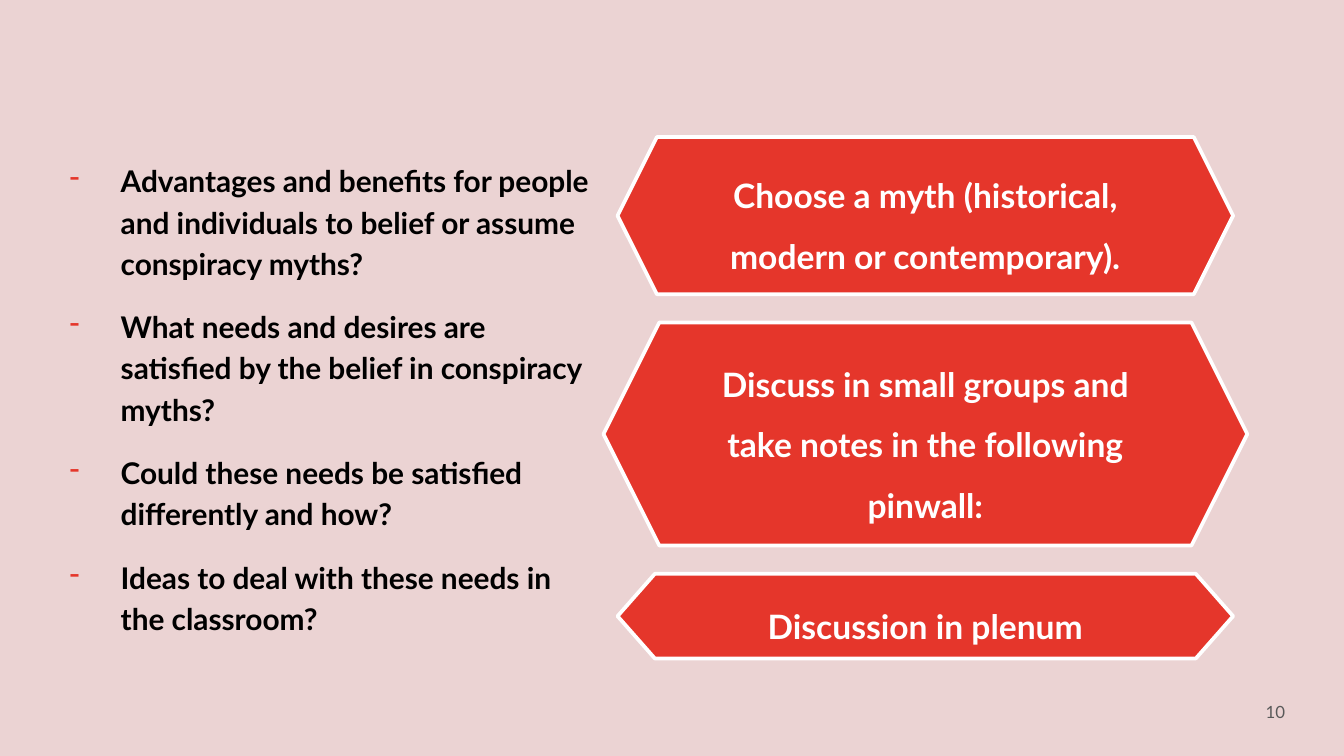
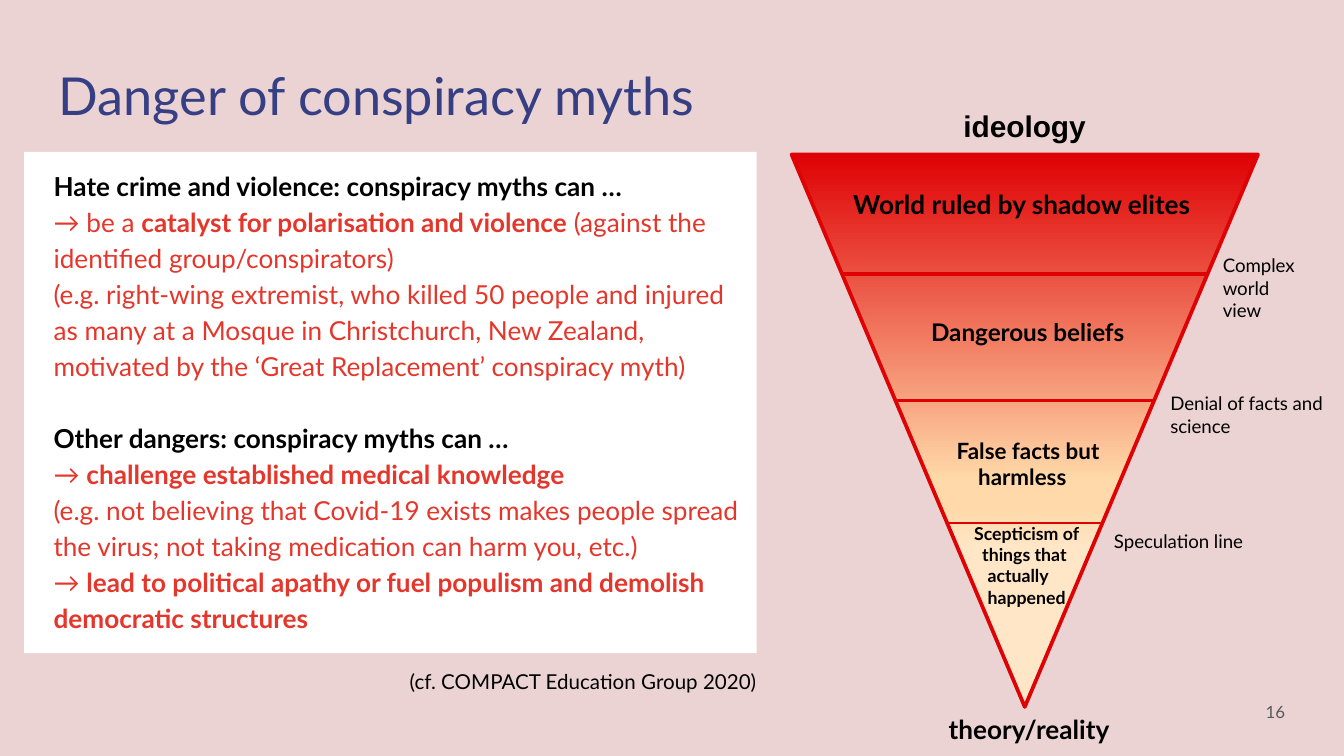
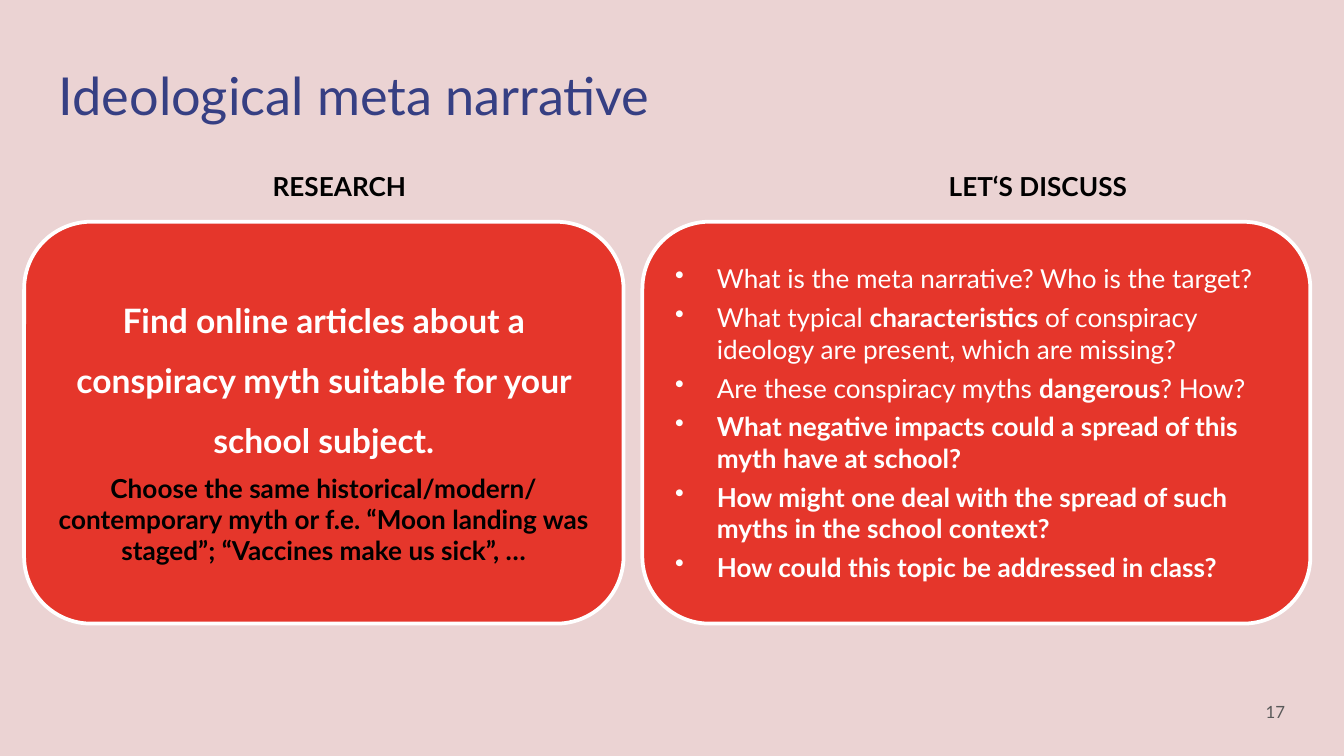
from dataclasses import dataclass

from lxml import etree
from pptx import Presentation
from pptx.dml.color import RGBColor
from pptx.enum.shapes import MSO_CONNECTOR, MSO_SHAPE
from pptx.enum.text import MSO_ANCHOR, PP_ALIGN
from pptx.oxml.ns import qn
from pptx.util import Inches, Pt

LEFT, CENTER, RIGHT = PP_ALIGN.LEFT, PP_ALIGN.CENTER, PP_ALIGN.RIGHT
TOP, MIDDLE = MSO_ANCHOR.TOP, MSO_ANCHOR.MIDDLE
RECTANGLE, ROUNDED = MSO_SHAPE.RECTANGLE, MSO_SHAPE.ROUNDED_RECTANGLE
HEXAGON, TRIANGLE = MSO_SHAPE.HEXAGON, MSO_SHAPE.ISOSCELES_TRIANGLE
STRAIGHT = MSO_CONNECTOR.STRAIGHT

COLORS = {
    "page": "EBD3D3", "title": "363F83", "accent": "E5362B", "ink": "000000",
    "light": "FFFFFF", "number": "595959", "alarm": "DF0205",
    "sand": "FFD9A9", "cream": "FFE6C6",
}
FONT = "Lato"
CELL = Inches(0.1)
COLUMNS, ROWS = 100, 56.25


@dataclass
class Box:
    """An area measured in columns and rows of the page grid."""
    left: float
    top: float
    width: float
    height: float

    def inner(self, column, row, width, height):
        return Box(self.left + column, self.top + row, width, height)

    def lengths(self):
        return [round(n * CELL) for n in (self.left, self.top, self.width, self.height)]


@dataclass
class Span:
    text: str
    bold: bool = False
    color: str = "ink"
    size: float = 14
    font: str = FONT


@dataclass
class Para:
    spans: list
    align: int = LEFT
    spacing: float = 1.0
    before: float = 0
    margin: float = 0
    hanging: float = 0
    bullet: str = ""
    bullet_color: str = "accent"


PAGE = Box(0, 0, COLUMNS, ROWS)


def rgb(name):
    return RGBColor.from_string(COLORS[name])


def line_of(text, **style):
    return Para([Span(text, **style)])


# Text

def set_bullet(para, mark, color, margin, hanging):
    props = para._p.get_or_add_pPr()
    props.set("marL", str(Inches(margin)))
    props.set("indent", str(-Inches(hanging)))
    if mark:
        tint = etree.SubElement(props, qn("a:buClr"))
        etree.SubElement(tint, qn("a:srgbClr")).set("val", COLORS[color])
        etree.SubElement(props, qn("a:buChar")).set("char", mark)


def write(shape, paras, anchor=TOP, inset=0.05):
    frame = shape.text_frame
    frame.word_wrap = True
    frame.vertical_anchor = anchor
    frame.margin_left = frame.margin_right = Inches(0.1)
    frame.margin_top = frame.margin_bottom = Inches(inset)
    for index, item in enumerate(paras):
        para = frame.add_paragraph() if index else frame.paragraphs[0]
        set_bullet(para, item.bullet, item.bullet_color, item.margin, item.hanging)
        para.alignment = item.align
        para.line_spacing = item.spacing
        para.space_before = Pt(item.before if index else 0)
        para.space_after = Pt(0)
        for span in item.spans:
            run = para.add_run()
            run.text = span.text
            run.font.name = span.font
            run.font.size = Pt(span.size)
            run.font.bold = span.bold
            run.font.color.rgb = rgb(span.color)


def add_text(page, box, paras, anchor=TOP, inset=0.05):
    write(page.shapes.add_textbox(*box.lengths()), paras, anchor, inset)


# Shapes

def add_panel(page, kind, box, fill, outline=None):
    shape = page.shapes.add_shape(kind, *box.lengths())
    shape.shadow.inherit = False
    shape.fill.solid()
    shape.fill.fore_color.rgb = rgb(fill)
    if outline:
        shape.line.color.rgb = rgb(outline)
        shape.line.width = Pt(2)
    else:
        shape.line.fill.background()
    return shape


def set_gradient(shape, stops, angle):
    shape.fill.gradient()
    shape.fill.gradient_angle = angle
    stop_list = shape.element.spPr.find(".//" + qn("a:gsLst"))
    for old in list(stop_list):
        stop_list.remove(old)
    for percent, color in stops:
        stop = etree.SubElement(stop_list, qn("a:gs"))
        stop.set("pos", str(percent * 1000))
        etree.SubElement(stop, qn("a:srgbClr")).set("val", COLORS[color])


def add_divider(page, left, right, row, weight):
    ends = [round(n * CELL) for n in (left, row, right, row)]
    divider = page.shapes.add_connector(STRAIGHT, *ends)
    divider.line.color.rgb = rgb("alarm")
    divider.line.width = Pt(weight)
    etree.SubElement(divider._element.spPr, qn("a:effectLst"))


# Parts shared by the slides

def new_page(deck, number, title=None):
    page = deck.slides.add_slide(deck.slide_layouts[6])
    page.background.fill.solid()
    page.background.fill.fore_color.rgb = rgb("page")
    if title:
        add_text(page, PAGE.inner(3.4, 3.7, 74.4, 6.3),
                 [line_of(title, size=28, color="title")], inset=0.1)
    add_text(page, PAGE.inner(90.6, 50.8, 6, 4.3),
             [Para([Span(str(number), size=9, color="number")], align=RIGHT)],
             MIDDLE, inset=0.1)
    return page


# Slide 10: questions and tasks

def add_questions(page, box):
    questions = [
        "Advantages and benefits for people and individuals to belief or assume "
        "conspiracy myths?",
        "What needs and desires are satisfied by the belief in conspiracy myths?",
        "Could these needs be satisfied differently and how?",
        "Ideas to deal with these needs in the classroom?",
    ]
    paras = [Para([Span(text, True, size=16)], spacing=1.15, before=12,
                  margin=0.5, hanging=0.38, bullet="-") for text in questions]
    add_text(page, box, paras, MIDDLE, inset=0.1)


def add_tasks(page, box):
    gap = 2.1
    tasks = [
        ("Choose a myth (historical, modern or contemporary).", 45.8, 11.7, 0.25),
        ("Discuss in small groups and take notes in the following pinwall:",
         47.9, 16.6, 0.25),
        ("Discussion in plenum", 45.8, 6.3, 0.44),
    ]
    row = 0
    for text, width, height, point in tasks:
        place = box.inner((box.width - width) / 2, row, width, height)
        hexagon = add_panel(page, HEXAGON, place, "accent", "light")
        hexagon.adjustments[0] = point
        write(hexagon, [Para([Span(text, True, "light", 18)], CENTER, 1.5)], MIDDLE)
        row += height + gap


def build_tasks_page(deck):
    page = new_page(deck, 10)
    add_questions(page, PAGE.inner(3, 8.4, 41.9, 42.3))
    add_tasks(page, PAGE.inner(44.9, 10.2, 47.9, 38.8))


# Slide 16: dangers and the pyramid of beliefs

def add_dangers(page, box):
    def plain(text):
        return Span(text, color="accent")

    def strong(text):
        return Span(text, True, "accent")

    blank_line = 19.3
    content = [
        (0, [Span("Hate crime and violence: conspiracy myths can …", True)]),
        (0, [plain("→ be a "), strong("catalyst for polarisation and violence "),
             plain("(against the identified group/conspirators)")]),
        (0, [plain("(e.g. right-wing extremist, who killed 50 people and injured as "
                   "many at a Mosque in Christchurch, New Zealand, motivated by the "
                   "‘Great Replacement’ conspiracy myth)")]),
        (blank_line, [Span("Other dangers: conspiracy myths can …", True)]),
        (0, [plain("→ "), strong("challenge established medical knowledge")]),
        (0, [plain("(e.g. not believing that Covid-19 exists makes people spread the "
                   "virus; not taking medication can harm you, etc.)")]),
        (0, [plain("→ "), strong("lead to political apathy or fuel populism and "
                                 "demolish democratic structures")]),
    ]
    paras = [Para(spans, spacing=1.15, before=before, margin=0.12)
             for before, spans in content]
    write(add_panel(page, RECTANGLE, box, "light"), paras, inset=0.1)
    add_text(page, box.inner(27.7, 38, 28.1, 2.9),
             [line_of("(cf. COMPACT Education Group 2020)", size=11)])


def add_pyramid(page, box):
    pyramid = add_panel(page, TRIANGLE, box, "alarm", "alarm")
    pyramid.rotation = 180
    set_gradient(pyramid, [(0, "alarm"), (59, "sand"), (64, "sand"), (71, "cream")], 90)

    # Dividers run from edge to edge
    for depth, weight in ((27.4, 1.25), (18.3, 1.25), (8.9, 1.75)):
        inset = depth / box.height * box.width / 2
        add_divider(page, box.left + inset, box.left + box.width - inset,
                    box.top + depth, weight)

    # Levels, ends and side labels
    labels = [
        ((3.6, 2, 29.9, 3.4), "World ruled by shadow elites", 14, True, FONT),
        ((9.4, 11.6, 17.8, 3.2), "Dangerous beliefs", 13, True, FONT),
        ((10.7, 41.1, 15.3, 3.4), "theory/reality", 14, True, FONT),
        ((11.8, -4, 15.3, 3.7), "ideology", 16, True, "Arial"),
        ((31.1, 6.9, 8.6, 6.1), "Complex world view", 10, False, FONT),
        ((27.2, 17.2, 16.4, 4.4), "Denial of facts and science", 10, False, FONT),
        ((23, 27.4, 14.2, 2.7), "Speculation line", 10, False, FONT),
    ]
    for place, text, size, bold, font in labels:
        add_text(page, box.inner(*place),
                 [line_of(text, size=size, bold=bold, font=font)])

    # Levels whose lines step inwards
    stepped = [
        ((11.3, 20.5, 12.8, 5), 12, [("False facts but", 0), ("harmless", 0.16)]),
        ((12.6, 26.9, 10.1, 7.4), 9.5,
         [("Scepticism of", 0), ("things that", 0.06), ("actually", 0.1),
          ("happened", 0.1)]),
    ]
    for place, size, lines in stepped:
        add_text(page, box.inner(*place),
                 [Para([Span(text, True, size=size)], margin=step)
                  for text, step in lines])


def build_dangers_page(deck):
    page = new_page(deck, 16, "Danger of conspiracy myths")
    add_dangers(page, PAGE.inner(1.8, 11.3, 54.5, 37.3))
    add_pyramid(page, PAGE.inner(58.9, 11.5, 34.7, 41.1))


# Slide 17: research and discussion

def add_card(page, box, heading, heading_column, paras):
    add_text(page, box.inner(heading_column, -5.2, 16.8, 5.2),
             [Para([Span(heading, True)], spacing=1.15, margin=0.12)], inset=0.1)
    write(add_panel(page, ROUNDED, box, "accent", "light"), paras, MIDDLE)


def build_narrative_page(deck):
    page = new_page(deck, 17, "Ideological meta narrative")
    research = [
        Para([Span("Find online articles about a conspiracy myth suitable for your "
                   "school subject.", True, "light", 18)], CENTER, 1.5),
        Para([Span("Choose the same historical/modern/ contemporary myth or f.e. "
                   "“Moon landing was staged”; “Vaccines make us sick”, …", True)],
             CENTER, before=6),
    ]
    questions = [
        [("What is the meta narrative? Who is the target?", False)],
        [("What typical ", False), ("characteristics", True),
         (" of conspiracy ideology are present, which are missing?", False)],
        [("Are these conspiracy myths ", False), ("dangerous", True),
         ("? How?", False)],
        [("What negative impacts could a spread of this myth have at school?", True)],
        [("How might one deal with the spread of such myths in the school context?",
          True)],
        [("How could this topic be addressed in class?", True)],
    ]
    discussion = [Para([Span(text, bold, "light") for text, bold in question],
                       before=4, margin=0.31, hanging=0.31,
                       bullet="•", bullet_color="light") for question in questions]
    add_card(page, PAGE.inner(1.8, 16.5, 44.6, 29.9), "RESEARCH", 16.3, research)
    add_card(page, PAGE.inner(47.8, 16.5, 49.7, 29.9), "LET‘S DISCUSS", 20.6, discussion)


def main():
    deck = Presentation()
    deck.slide_width = COLUMNS * CELL
    deck.slide_height = round(ROWS * CELL)
    build_tasks_page(deck)
    build_dangers_page(deck)
    build_narrative_page(deck)
    deck.save("out.pptx")


if __name__ == "__main__":
    main()
